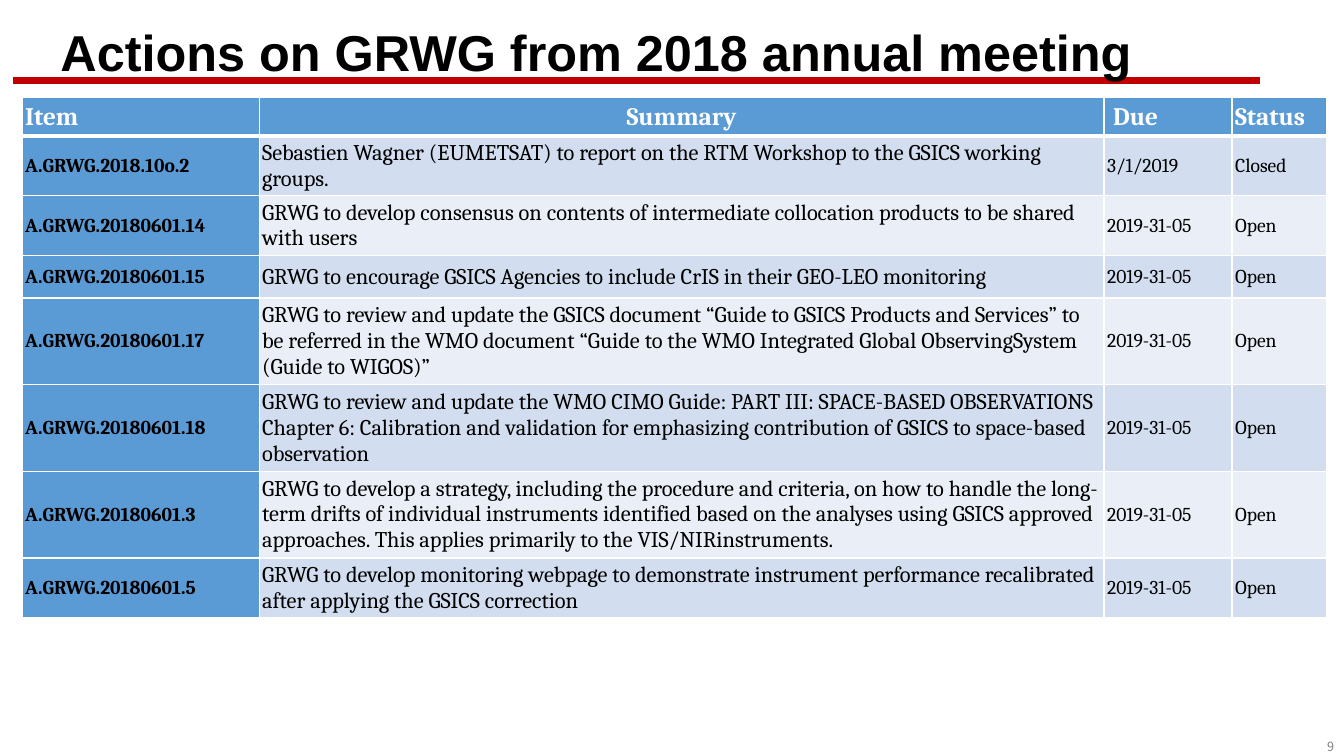
from dataclasses import dataclass

from lxml.etree import SubElement
from pptx import Presentation
from pptx.dml.color import RGBColor
from pptx.enum.shapes import MSO_CONNECTOR
from pptx.enum.text import MSO_ANCHOR, MSO_AUTO_SIZE, PP_ALIGN
from pptx.oxml.ns import qn
from pptx.util import Inches, Pt


@dataclass(frozen=True)
class Theme:
    white: str = "FFFFFF"
    black: str = "000000"
    gray: str = "808080"
    red: str = "C00000"
    blue: str = "5B9BD5"
    bands: tuple = ("D2DEEF", "EAEFF7")
    title_font: str = "Arial"
    table_font: str = "Cambria"
    number_font: str = "Noto Sans CJK KR"
    title_size: int = 36
    header_size: int = 18
    summary_size: int = 16
    detail_size: int = 14
    number_size: int = 9


theme = Theme()


def style_paragraph(para, font_name, size, color, bold=False, align=PP_ALIGN.LEFT):
    para.alignment = align
    for span in para.runs:
        span.font.name = font_name
        span.font.size = Pt(size)
        span.font.bold = bold
        span.font.color.rgb = RGBColor.from_string(color)


def add_borders(cell, top_points, bottom_points):
    """Draw white cell borders; call before filling, as the schema orders them first."""
    properties = cell._tc.get_or_add_tcPr()
    for side, points in (("L", 1), ("R", 1), ("T", top_points), ("B", bottom_points)):
        border = SubElement(properties, qn(f"a:ln{side}"), w=str(Pt(points)))
        fill = SubElement(border, qn("a:solidFill"))
        SubElement(fill, qn("a:srgbClr"), val=theme.white)


header = ("Item", "Summary", "Due", "Status")
actions = [
    ("A.GRWG.2018.10o.2",
     "Sebastien Wagner (EUMETSAT) to report on the RTM Workshop to the GSICS working groups.",
     "3/1/2019", "Closed"),
    ("A.GRWG.20180601.14",
     "GRWG to develop consensus on contents of intermediate collocation products to be "
     "shared with users",
     "2019-31-05", "Open"),
    ("A.GRWG.20180601.15",
     "GRWG to encourage GSICS Agencies to include CrIS in their GEO-LEO monitoring",
     "2019-31-05", "Open"),
    ("A.GRWG.20180601.17",
     "GRWG to review and update the GSICS document “Guide to GSICS Products and Services” "
     "to be referred in the WMO document “Guide to the WMO Integrated Global "
     "ObservingSystem (Guide to WIGOS)”",
     "2019-31-05", "Open"),
    ("A.GRWG.20180601.18",
     "GRWG to review and update the WMO CIMO Guide: PART III: SPACE-BASED OBSERVATIONS "
     "Chapter 6: Calibration and validation for emphasizing contribution of GSICS to "
     "space-based observation",
     "2019-31-05", "Open"),
    ("A.GRWG.20180601.3",
     "GRWG to develop a strategy, including the procedure and criteria, on how to handle "
     "the long-term drifts of individual instruments identified based on the analyses "
     "using GSICS approved approaches. This applies primarily to the VIS/NIRinstruments.",
     "2019-31-05", "Open"),
    ("A.GRWG.20180601.5",
     "GRWG to develop monitoring webpage to demonstrate instrument performance "
     "recalibrated after applying the GSICS correction",
     "2019-31-05", "Open"),
]
column_widths = (2.35, 8.38, 1.27, 0.94)
row_heights = (0.38, 0.59, 0.59, 0.42, 0.86, 0.86, 0.86, 0.59)

deck = Presentation()
deck.slide_width, deck.slide_height = Inches(13.33), Inches(7.5)
page = deck.slides.add_slide(deck.slide_layouts[5])

# Title
title = page.shapes.title
title.left, title.top = Inches(0.5), Inches(0.25)
title.width, title.height = Inches(11.5), Inches(0.6)
title.text_frame.text = "Actions on GRWG from 2018 annual meeting"
title.text_frame.auto_size = MSO_AUTO_SIZE.NONE
title.text_frame.vertical_anchor = MSO_ANCHOR.MIDDLE
title_para = title.text_frame.paragraphs[0]
title_para.line_spacing = 0.9
style_paragraph(title_para, theme.title_font, theme.title_size, theme.black, bold=True)

# Red rule, placed behind the title
rule = page.shapes.add_connector(
    MSO_CONNECTOR.STRAIGHT, Inches(0.13), Inches(0.8), Inches(12.5), Inches(0.8))
rule.line.color.rgb = RGBColor.from_string(theme.red)
rule.line.width = Pt(4.5)
SubElement(rule._element.spPr, qn("a:effectLst"))
title._element.addprevious(rule._element)

# Page number
number_box = page.shapes.add_textbox(Inches(12.19), Inches(7.28), Inches(1.14), Inches(0.25))
number_box.text_frame.word_wrap = True
number_box.text_frame.text = "9"
style_paragraph(number_box.text_frame.paragraphs[0], theme.number_font, theme.number_size,
                theme.gray, align=PP_ALIGN.RIGHT)

# Action table
table = page.shapes.add_table(
    len(row_heights), len(column_widths), Inches(0.22), Inches(0.97),
    Inches(sum(column_widths)), Inches(sum(row_heights))).table
for column, width in zip(table.columns, column_widths):
    column.width = Inches(width)
for row, height in zip(table.rows, row_heights):
    row.height = Inches(height)

for row_index, values in enumerate([header, *actions]):
    is_header = row_index == 0
    for column_index, value in enumerate(values):
        name = header[column_index]
        cell = table.cell(row_index, column_index)
        cell.text_frame.text = value
        cell.vertical_anchor = MSO_ANCHOR.MIDDLE
        cell.margin_left = cell.margin_right = Inches(0.03)
        cell.margin_top = cell.margin_bottom = Inches(0.03)
        if is_header and name == "Due":
            cell.margin_left = Inches(0.09)

        add_borders(cell, 3 if row_index == 1 else 1, 3 if is_header else 1)
        fill_color = theme.bands[(row_index - 1) % 2]
        if is_header or name == "Item":
            fill_color = theme.blue
        cell.fill.solid()
        cell.fill.fore_color.rgb = RGBColor.from_string(fill_color)

        size = theme.summary_size if name == "Summary" else theme.detail_size
        style_paragraph(
            cell.text_frame.paragraphs[0], theme.table_font,
            theme.header_size if is_header else size,
            theme.white if is_header else theme.black,
            bold=is_header or name == "Item",
            align=PP_ALIGN.CENTER if is_header and name == "Summary" else PP_ALIGN.LEFT)

deck.save("out.pptx")
